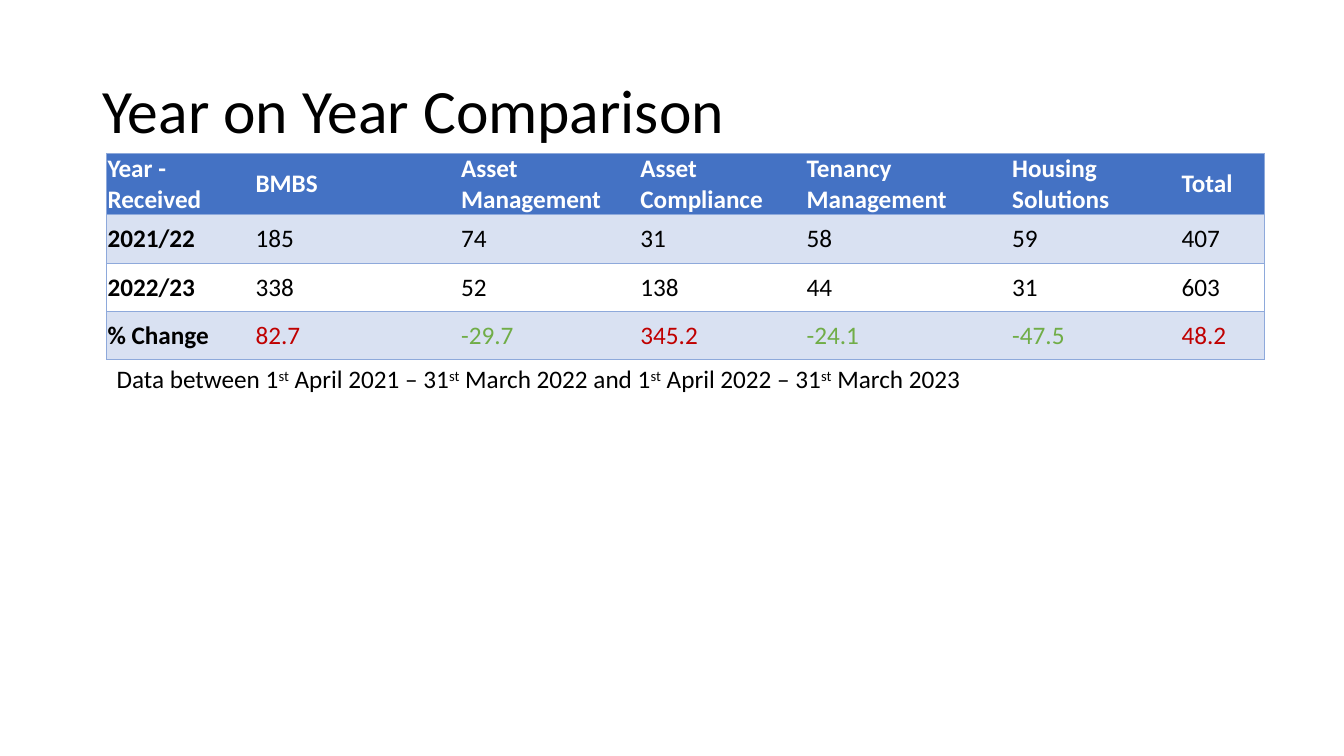
from lxml import etree
from pptx import Presentation
from pptx import util as u
from pptx.dml.color import RGBColor
from pptx.enum import text
from pptx.oxml.ns import qn

FONT = "Calibri"
BLACK, WHITE = "000000", "FFFFFF"
HEADER_BLUE, BAND_BLUE, RULE_BLUE = "4472C4", "D9E1F2", "8EA9DB"
RISE_RED, FALL_GREEN = "C00000", "70AD47"

COLUMN_WIDTHS = [3.73, 5.18, 4.52, 4.19, 5.18, 4.27, 2.11]
ROW_HEIGHT = 1.22
COMPARISON = [
    ["Year - Received", "BMBS", "Asset Management", "Asset Compliance",
     "Tenancy Management", "Housing Solutions", "Total"],
    ["2021/22", "185", "74", "31", "58", "59", "407"],
    ["2022/23", "338", "52", "138", "44", "31", "603"],
    ["% Change", "82.7", "-29.7", "345.2", "-24.1", "-47.5", "48.2"],
]
ROW_FILLS = [HEADER_BLUE, BAND_BLUE, None, BAND_BLUE]
PERIOD = ["Data between 1", "st", " April 2021 – 31", "st", " March 2022 and 1",
          "st", " April 2022 – 31", "st", " March 2023"]


def colour(hex_string):
    return RGBColor.from_string(hex_string)


def set_font(paragraph, size, hex_string, bold=False):
    font = paragraph.font
    font.name, font.size, font.bold = FONT, u.Pt(size), bold
    font.color.rgb = colour(hex_string)


def add_text_frame(slide, box, anchor):
    frame = slide.shapes.add_textbox(*map(u.Cm, box)).text_frame
    frame.word_wrap = True
    frame.vertical_anchor = anchor
    frame.paragraphs[0].line_spacing = 0.9
    return frame


def add_title(slide, box):
    heading = add_text_frame(slide, box, text.MSO_ANCHOR.MIDDLE).paragraphs[0]
    heading.text = "Year on Year Comparison"
    set_font(heading, 44, BLACK)


def add_period_note(slide, box):
    note = add_text_frame(slide, box, text.MSO_ANCHOR.TOP).paragraphs[0]
    note.space_before = u.Pt(10)
    set_font(note, 18, BLACK)
    for words in PERIOD:
        run = note.add_run()
        run.text = words
        if words == "st":
            run.font._element.set("baseline", "30000")


def set_borders(cell, ruled_sides):
    properties = cell._tc.get_or_add_tcPr()
    for position, side in enumerate("LRTB"):
        line = etree.Element(qn(f"a:ln{side}"), w=str(u.Pt(0.5)))
        if side in ruled_sides:
            fill = etree.SubElement(line, qn("a:solidFill"))
            etree.SubElement(fill, qn("a:srgbClr"), val=RULE_BLUE)
        else:
            etree.SubElement(line, qn("a:noFill"))
        properties.insert(position, line)


def text_colour(row, column, words):
    if row == 0:
        return WHITE
    if row == len(COMPARISON) - 1 and column > 0:
        return FALL_GREEN if words.startswith("-") else RISE_RED
    return BLACK


def fill_cell(cell, row, column, words):
    cell.margin_left = cell.margin_right = cell.margin_top = u.Cm(0.02)
    cell.margin_bottom = 0
    cell.vertical_anchor = text.MSO_ANCHOR.MIDDLE
    cell.text = words
    set_font(cell.text_frame.paragraphs[0], 18, text_colour(row, column, words),
             bold=row == 0 or column == 0)
    if ROW_FILLS[row]:
        cell.fill.solid()
        cell.fill.fore_color.rgb = colour(ROW_FILLS[row])
    else:
        cell.fill.background()
    outer_side = {0: "L", len(COLUMN_WIDTHS) - 1: "R"}.get(column, "")
    set_borders(cell, "TB" + outer_side)


def add_comparison_table(slide, left, top):
    table = slide.shapes.add_table(
        len(COMPARISON), len(COLUMN_WIDTHS), u.Cm(left), u.Cm(top),
        u.Cm(sum(COLUMN_WIDTHS)), u.Cm(ROW_HEIGHT * len(COMPARISON))).table
    table.first_row = table.horz_banding = False
    for column, width in zip(table.columns, COLUMN_WIDTHS):
        column.width = u.Cm(width)
    for row, values in enumerate(COMPARISON):
        table.rows[row].height = u.Cm(ROW_HEIGHT)
        for column, words in enumerate(values):
            fill_cell(table.cell(row, column), row, column, words)


def main():
    presentation = Presentation()
    presentation.slide_width, presentation.slide_height = u.Cm(33.87), u.Cm(19.05)
    slide = presentation.slides.add_slide(presentation.slide_layouts[6])
    add_title(slide, (2.33, 1.01, 29.21, 3.68))
    add_period_note(slide, (2.69, 9.12, 29.21, 1.83))
    add_comparison_table(slide, 2.69, 3.86)
    presentation.save("out.pptx")


if __name__ == "__main__":
    main()
